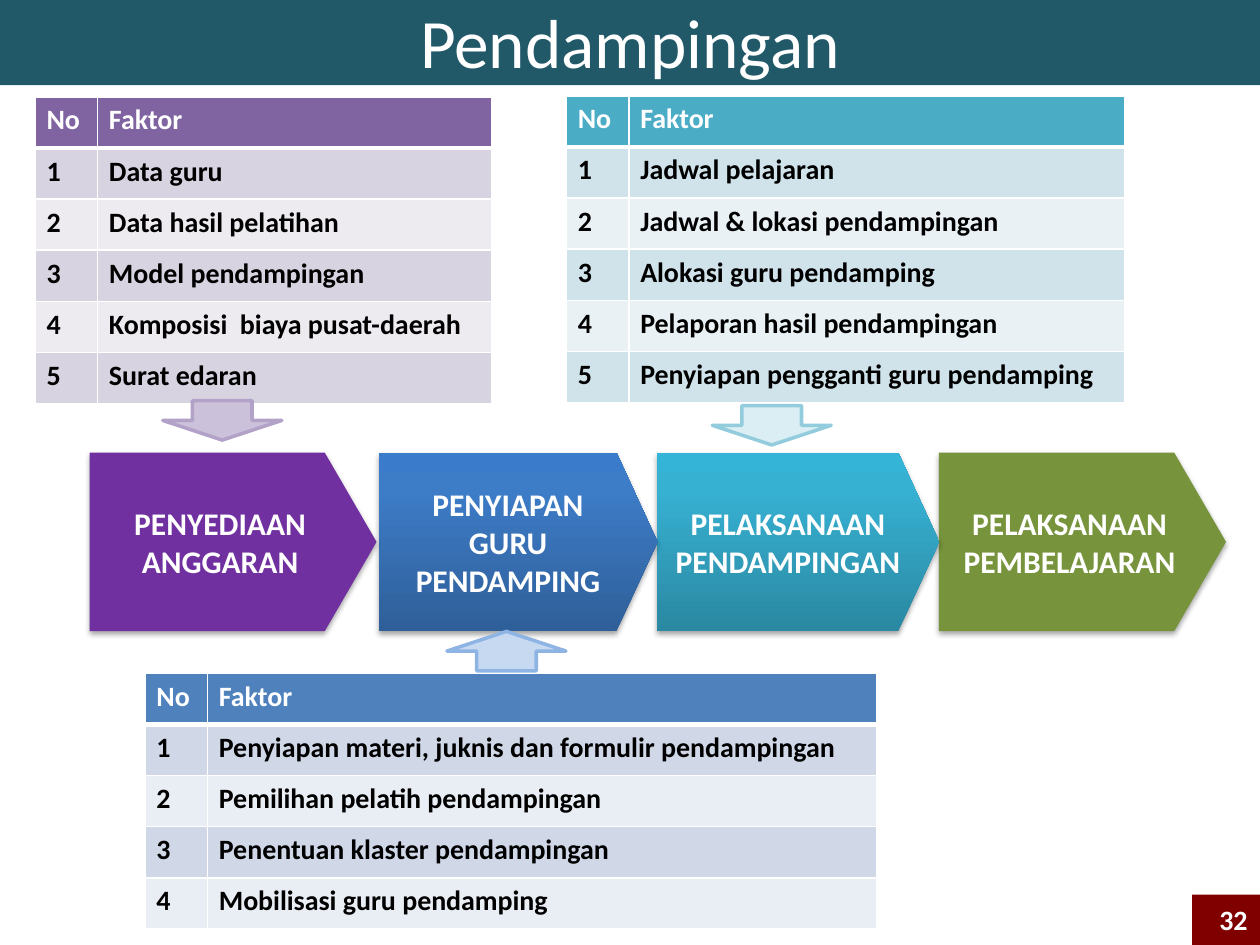
import pptx
import pptx.util
import pptx.dml.color
import pptx.enum.shapes
import pptx.enum.text
import pptx.oxml.ns
from dataclasses import dataclass
from lxml import etree

Pt = pptx.util.Pt
Kind = pptx.enum.shapes.MSO_SHAPE
Align = pptx.enum.text.PP_ALIGN
Mid = pptx.enum.text.MSO_ANCHOR.MIDDLE
qn = pptx.oxml.ns.qn


@dataclass(frozen=True)
class Theme:
    font: str = "Calibri"
    white: str = "FFFFFF"
    black: str = "000000"
    bar: str = "215968"
    badge: str = "800000"
    big: float = 39.6
    step: float = 18
    small: float = 16
    purple: tuple = ("8064A2", "D8D3E0", "EDEAF0")
    blue: tuple = ("4F81BD", "D0D8E8", "E9EDF4")
    teal: tuple = ("4BACC6", "D0E3EA", "E9F1F5")
    lilac: tuple = ("CCC1DA", "B3A2C7")
    sky: tuple = ("C6D9F1", "8EB4E3")
    aqua: tuple = ("DBEEF4", "93CDDD")
    violet: str = "7030A0"
    green: str = "77933C"
    azure: tuple = ("2F5F99", "3D7CC7", "3A7CCB")
    cyan: tuple = ("2A88A2", "37B1D2", "34B4D6")


T = Theme()


def rgb(code):
    return pptx.dml.color.RGBColor.from_string(code)


def paint(item, color):
    item.fill.solid()
    item.fill.fore_color.rgb = rgb(color)


def node(root, tag, **attrs):
    return etree.SubElement(root, qn("a:" + tag), attrs)


def tint(root, color):
    return node(root, "srgbClr", val=color)


def write(frame, text, size=T.small, color=T.white, bold=True,
          align=Align.LEFT, anchor=None):
    frame.word_wrap = True
    if anchor is not None:
        frame.vertical_anchor = anchor
    frame.text = text
    for para in frame.paragraphs:
        para.alignment = align
        for run in para.runs:
            run.font.name = T.font
            run.font.size = Pt(size)
            run.font.bold = bold
            run.font.color.rgb = rgb(color)


def block(slide, kind, box):
    shape = slide.shapes.add_shape(kind, *map(Pt, box))
    shape.shadow.inherit = False
    shape.line.fill.background()
    return shape


def banner(slide, box, text):
    title = slide.shapes.title
    title.left, title.top, title.width, title.height = map(Pt, box)
    paint(title, T.bar)
    title.text_frame.auto_size = pptx.enum.text.MSO_AUTO_SIZE.NONE
    write(title.text_frame, text, size=T.big, bold=False,
          align=Align.CENTER, anchor=Mid)


def blend(shape, colors):
    shape.fill.gradient()
    shape.fill.gradient_angle = 90
    stops = shape.element.spPr.find(".//" + qn("a:gsLst"))
    for stop in list(stops):
        stops.remove(stop)
    for place, color in zip((0, 80, 100), colors):
        tint(node(stops, "gs", pos=str(place * 1000)), color)


def shade(shape):
    effect = shape.element.spPr.find(qn("a:effectLst"))
    drop = node(effect, "outerShdw", blurRad=str(Pt(3.1)),
                dist=str(Pt(1.8)), dir="5400000", rotWithShape="0")
    node(tint(drop, T.black), "alpha", val="35000")


def stage(slide, box, text, fill, tip):
    shape = block(slide, Kind.PENTAGON, box)
    shape.adjustments[0] = tip
    if isinstance(fill, tuple):
        blend(shape, fill)
    else:
        paint(shape, fill)
    shade(shape)
    write(shape.text_frame, text, size=T.step, align=Align.CENTER, anchor=Mid)


def edge(cell, row):
    props = cell._tc.get_or_add_tcPr()
    for spot, side in enumerate(("lnL", "lnR", "lnT", "lnB")):
        thick = 3 if row == 0 and side == "lnB" else 1
        line = node(props, side, w=str(Pt(thick)))
        tint(node(line, "solidFill"), T.white)
        props.insert(spot, line)


def factors(slide, box, names, colors):
    left, top, width, high = box
    rows = [("No", "Faktor")]
    rows += [(str(num), name) for num, name in enumerate(names, 1)]
    table = slide.shapes.add_table(
        len(rows), 2, *map(Pt, (left, top, width, high * len(rows)))).table
    slim = 35.7
    table.columns[0].width = Pt(slim)
    table.columns[1].width = Pt(width - slim)
    head, odd, even = colors
    for row, texts in enumerate(rows):
        table.rows[row].height = Pt(high)
        fill = head if row == 0 else odd if row % 2 else even
        for col, text in enumerate(texts):
            cell = table.cell(row, col)
            cell.margin_left = cell.margin_right = Pt(6.6)
            cell.margin_top = cell.margin_bottom = Pt(3.6)
            paint(cell, fill)
            edge(cell, row)
            write(cell.text_frame, text, color=T.black if row else T.white)


def arrow(slide, left, top, colors, turn=0):
    shape = block(slide, Kind.DOWN_ARROW, (left, top, 68, 22.5))
    shape.rotation = turn
    fill, line = colors
    paint(shape, fill)
    shape.line.color.rgb = rgb(line)
    shape.line.width = Pt(2)


def badge(slide, box, text):
    shape = block(slide, Kind.RECTANGLE, box)
    paint(shape, T.badge)
    write(shape.text_frame, text, align=Align.RIGHT, anchor=Mid)


def chain(slide, top, high):
    steps = (
        (536.6, 164, "PELAKSANAAN PEMBELAJARAN", T.green, 0.29),
        (375.5, 161.3, "PELAKSANAAN PENDAMPINGAN", T.cyan, 0.23),
        (216.6, 159.2, "PENYIAPAN\nGURU PENDAMPING", T.azure, 0.23),
        (51.2, 164, "PENYEDIAAN ANGGARAN", T.violet, 0.29),
    )
    for left, width, text, fill, tip in steps:
        stage(slide, (left, top, width, high), text, fill, tip)


def main():
    deck = pptx.Presentation()
    deck.slide_width, deck.slide_height = Pt(720), Pt(540)
    slide = deck.slides.add_slide(deck.slide_layouts[5])
    banner(slide, (0, -2.3, 720, 51), "Pendampingan")
    chain(slide, 258.7, 102)
    factors(slide, (20, 55.4, 261.3, 29.2), (
        "Data guru", "Data hasil pelatihan", "Model pendampingan",
        "Komposisi  biaya pusat-daerah", "Surat edaran"), T.purple)
    arrow(slide, 93, 229, T.lilac)
    factors(slide, (82.8, 384.8, 418, 29.2), (
        "Penyiapan materi, juknis dan formulir pendampingan",
        "Pemilihan pelatih pendampingan", "Penentuan klaster pendampingan",
        "Mobilisasi guru pendamping"), T.blue)
    arrow(slide, 255.4, 360.8, T.sky, turn=180)
    factors(slide, (323.6, 54.8, 319, 29.2), (
        "Jadwal pelajaran", "Jadwal & lokasi pendampingan",
        "Alokasi guru pendamping", "Pelaporan hasil pendampingan",
        "Penyiapan pengganti guru pendamping"), T.teal)
    arrow(slide, 407, 231.8, T.aqua)
    badge(slide, (681.2, 511.2, 38.8, 28.8), "32")
    deck.save("out.pptx")


if __name__ == "__main__":
    main()
